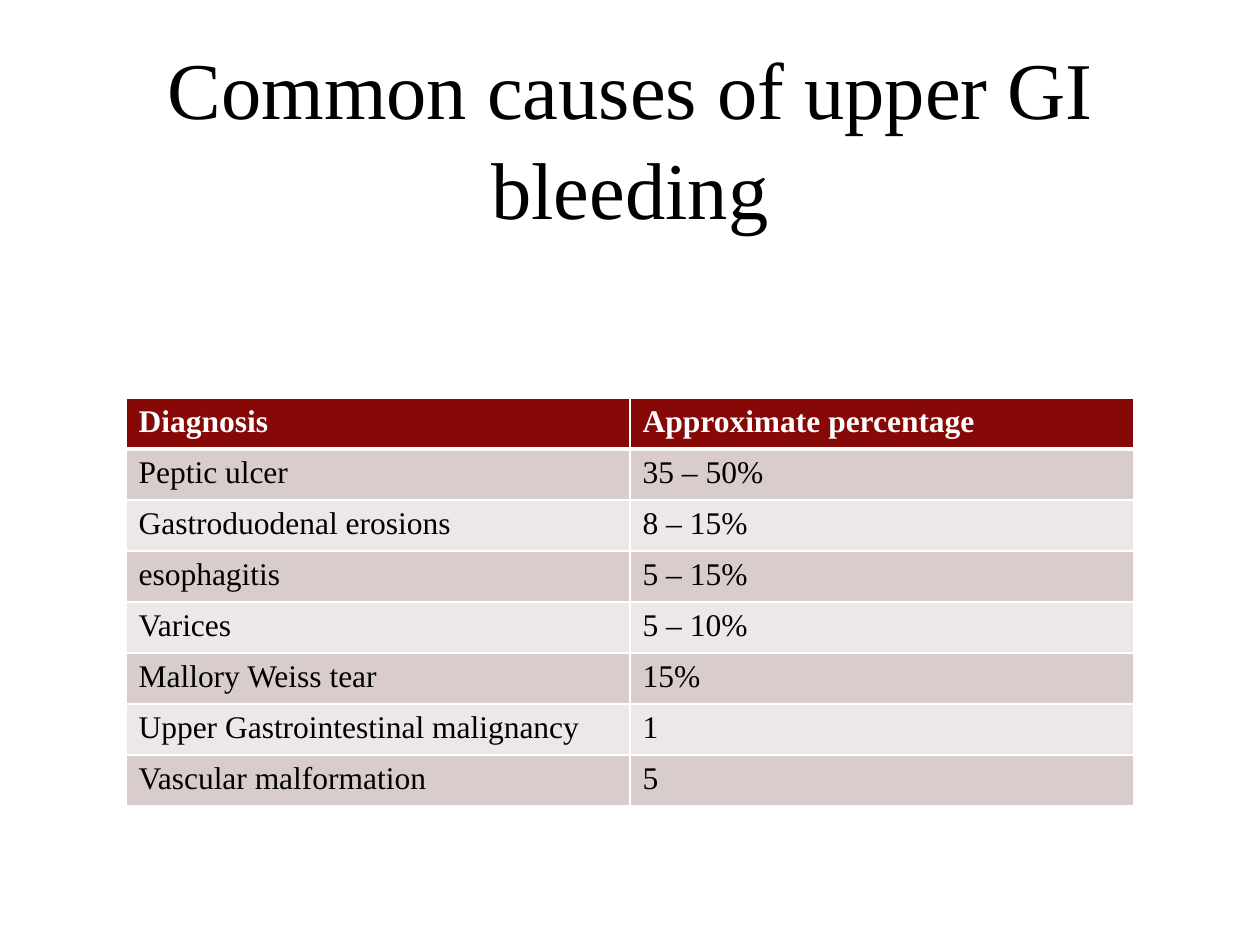
from dataclasses import dataclass

from lxml.etree import SubElement
from pptx import Presentation
from pptx.dml.color import RGBColor
from pptx.enum.text import MSO_ANCHOR, PP_ALIGN
from pptx.oxml.ns import qn
from pptx.util import Inches, Pt


@dataclass(frozen=True)
class Theme:
    """Font, type sizes and colours of the slide."""
    font: str = "Times New Roman"
    title_size: int = 46
    table_size: int = 18
    white: str = "FFFFFF"
    black: str = "000000"
    header: str = "860908"
    bands: tuple = ("D9CCCC", "EDE7E7")


THEME = Theme()
CAUSES = [
    ("Diagnosis", "Approximate percentage"),
    ("Peptic ulcer", "35 – 50%"),
    ("Gastroduodenal erosions", "8 – 15%"),
    ("esophagitis", "5 – 15%"),
    ("Varices", "5 – 10%"),
    ("Mallory Weiss tear", "15%"),
    ("Upper Gastrointestinal malignancy", "1"),
    ("Vascular malformation", "5"),
]


def add_run(p, text, size, color, bold=False):
    """Append a styled run to a paragraph."""
    r = p.add_run()
    r.text = text
    r.font.name = THEME.font
    r.font.size = Pt(size)
    r.font.bold = bold
    r.font.color.rgb = RGBColor.from_string(color)


def set_borders(cell, bottom):
    """Draw white borders round a cell, with its own bottom width."""
    tc_pr = cell._tc.get_or_add_tcPr()
    widths = {"a:lnL": 1, "a:lnR": 1, "a:lnT": 1, "a:lnB": bottom}
    for i, (tag, width) in enumerate(widths.items()):
        ln = tc_pr.makeelement(qn(tag), {"w": str(Pt(width))})
        tc_pr.insert(i, ln)
        fill = SubElement(ln, qn("a:solidFill"))
        SubElement(fill, qn("a:srgbClr"), val=THEME.white)


def add_title(s, text, left, top, width, height):
    """Place the centred title in the given box."""
    tf = s.shapes.add_textbox(left, top, width, height).text_frame
    tf.word_wrap = True
    tf.vertical_anchor = MSO_ANCHOR.MIDDLE
    tf.margin_top = Inches(0.15)
    p = tf.paragraphs[0]
    p.alignment = PP_ALIGN.CENTER
    p.line_spacing = 1.04
    add_run(p, text, THEME.title_size, THEME.black)


def add_causes_table(s, rows, left, top, width, height):
    """Place the banded table of causes in the given box."""
    table = s.shapes.add_table(len(rows), len(rows[0]), left, top, width, height).table
    for i, row in enumerate(rows):
        header = i == 0
        fill = THEME.header if header else THEME.bands[(i - 1) % 2]
        color = THEME.white if header else THEME.black
        for j, text in enumerate(row):
            cell = table.cell(i, j)
            cell.fill.solid()
            cell.fill.fore_color.rgb = RGBColor.from_string(fill)
            set_borders(cell, 3 if header else 1)
            add_run(cell.text_frame.paragraphs[0], text, THEME.table_size, color, header)


def main():
    """Build and save the slide."""
    prs = Presentation()
    prs.slide_width, prs.slide_height = Inches(10), Inches(7.5)
    s = prs.slides.add_slide(prs.slide_layouts[6])
    add_title(s, "Common causes of upper GI bleeding",
              Inches(1), Inches(0.55), Inches(8), Inches(0.95))
    add_causes_table(s, CAUSES, Inches(1), Inches(3.16), Inches(8), Inches(3.24))
    prs.save("out.pptx")


if __name__ == "__main__":
    main()
